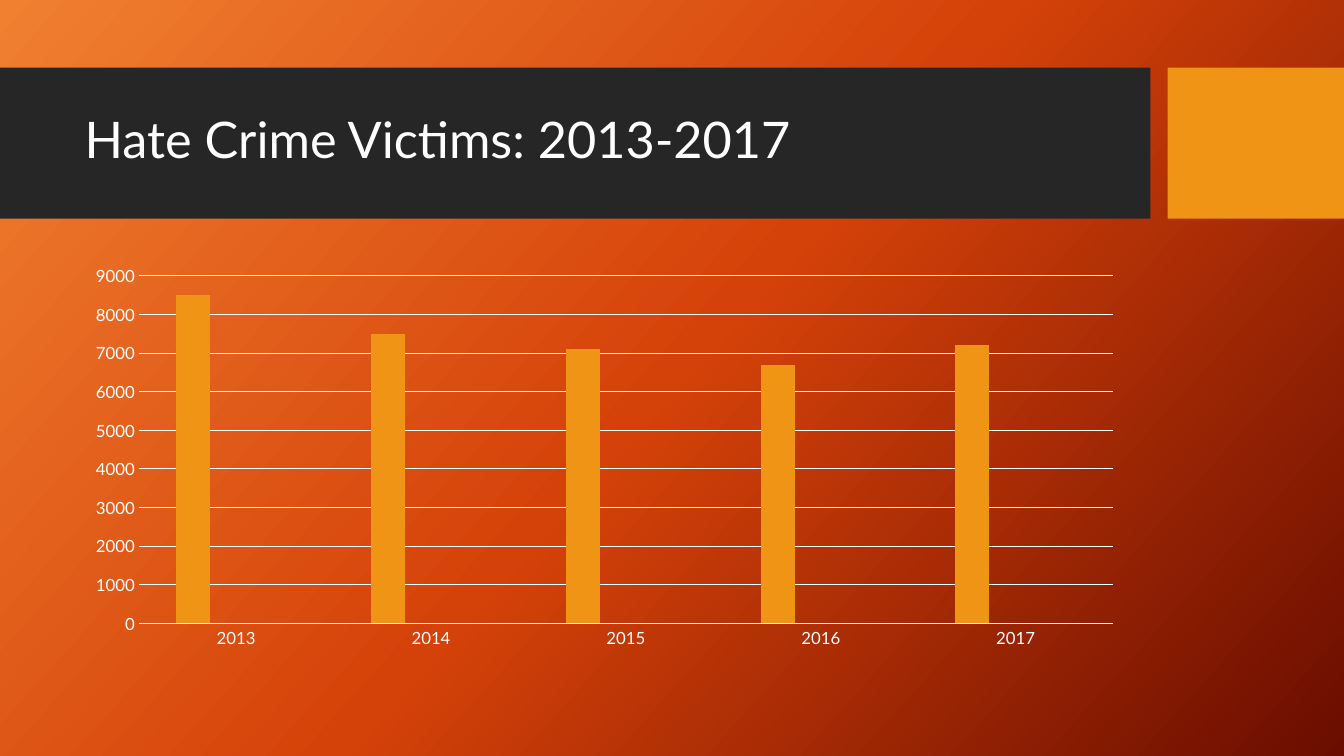
from copy import deepcopy

from pptx import Presentation
from pptx.chart.data import CategoryChartData
from pptx.dml.color import RGBColor
from pptx.enum.chart import XL_CHART_TYPE, XL_TICK_MARK
from pptx.enum.shapes import MSO_SHAPE
from pptx.enum.text import MSO_ANCHOR, PP_ALIGN
from pptx.util import Inches, Pt

FONT = "Lato"
WHITE = RGBColor(0xFF, 0xFF, 0xFF)
CHARCOAL = RGBColor(0x26, 0x26, 0x26)
AMBER = RGBColor(0xF0, 0x94, 0x15)
SAND = RGBColor(0xC1, 0xB5, 0x6B)
GREEN = RGBColor(0x4B, 0xAF, 0x73)
LIGHT_ORANGE = RGBColor(0xF1, 0x80, 0x31)
ORANGE = RGBColor(0xD5, 0x42, 0x09)
DARK_RED = RGBColor(0x6A, 0x0D, 0x00)

presentation = Presentation()
presentation.slide_width = Inches(13.33)
presentation.slide_height = Inches(7.5)
slide = presentation.slides.add_slide(presentation.slide_layouts[5])

# Background: a third gradient stop is cloned from the default two
background = slide.background.fill
background.gradient()
background.gradient_angle = 360 - 42
stop_list = background._fill._gradFill.gsLst
stop_list.append(deepcopy(stop_list[-1]))
stop_colors = [LIGHT_ORANGE, ORANGE, DARK_RED]
for index, (stop, color) in enumerate(zip(background.gradient_stops, stop_colors)):
    stop.color.rgb = color
    stop.position = index / 2

# Title band and accent block
for left, width, color in [(0, 11.41, CHARCOAL), (11.58, 1.75, AMBER)]:
    band = slide.shapes.add_shape(
        MSO_SHAPE.RECTANGLE, Inches(left), Inches(0.67), Inches(width), Inches(1.5)
    )
    band.shadow.inherit = False
    band.fill.solid()
    band.fill.fore_color.rgb = color
    band.line.fill.background()

# Title, moved in front of the band
title = slide.shapes.title
slide.shapes._spTree.append(title._element)
title.left, title.top = Inches(0.74), Inches(0.82)
title.width, title.height = Inches(10.51), Inches(1.18)
title.text_frame.text = "Hate Crime Victims: 2013-2017"
title.text_frame.vertical_anchor = MSO_ANCHOR.MIDDLE
paragraph = title.text_frame.paragraphs[0]
paragraph.alignment = PP_ALIGN.LEFT
paragraph.line_spacing = 0.9
title_font = paragraph.runs[0].font
title_font.name = FONT
title_font.size = Pt(36)
title_font.color.rgb = WHITE

# Chart
chart_data = CategoryChartData()
chart_data.categories = ["2013", "2014", "2015", "2016", "2017"]
chart_data.add_series("Series 1", [8500, 7500, 7100, 6700, 7200])
for name in ["Series 2", "Series 3"]:
    chart_data.add_series(name, [None] * 5)
chart = slide.shapes.add_chart(
    XL_CHART_TYPE.COLUMN_CLUSTERED,
    Inches(0.74), Inches(2.56), Inches(10.51), Inches(3.94), chart_data,
).chart
chart.has_title = False
chart.has_legend = False
chart.font.name = FONT
chart.font.size = Pt(10)
chart.font.color.rgb = WHITE

plot = chart.plots[0]
plot.gap_width = 219
plot.overlap = -27
plot.vary_by_categories = False
for series, color in zip(plot.series, [AMBER, SAND, GREEN]):
    series.format.fill.solid()
    series.format.fill.fore_color.rgb = color

for axis in [chart.category_axis, chart.value_axis]:
    axis.major_tick_mark = XL_TICK_MARK.NONE
    axis.minor_tick_mark = XL_TICK_MARK.NONE
    axis.tick_labels.font.name = FONT
    axis.tick_labels.font.size = Pt(12)
    axis.tick_labels.font.color.rgb = WHITE

value_axis = chart.value_axis
value_axis.minimum_scale = 0
value_axis.maximum_scale = 9000
value_axis.major_unit = 1000
value_axis.tick_labels.number_format = "0"
value_axis.tick_labels.number_format_is_linked = False
value_axis.format.line.fill.background()
value_axis.has_major_gridlines = True
for line in [chart.category_axis.format.line, value_axis.major_gridlines.format.line]:
    line.color.rgb = WHITE
    line.width = Pt(0.75)

presentation.save("out.pptx")
